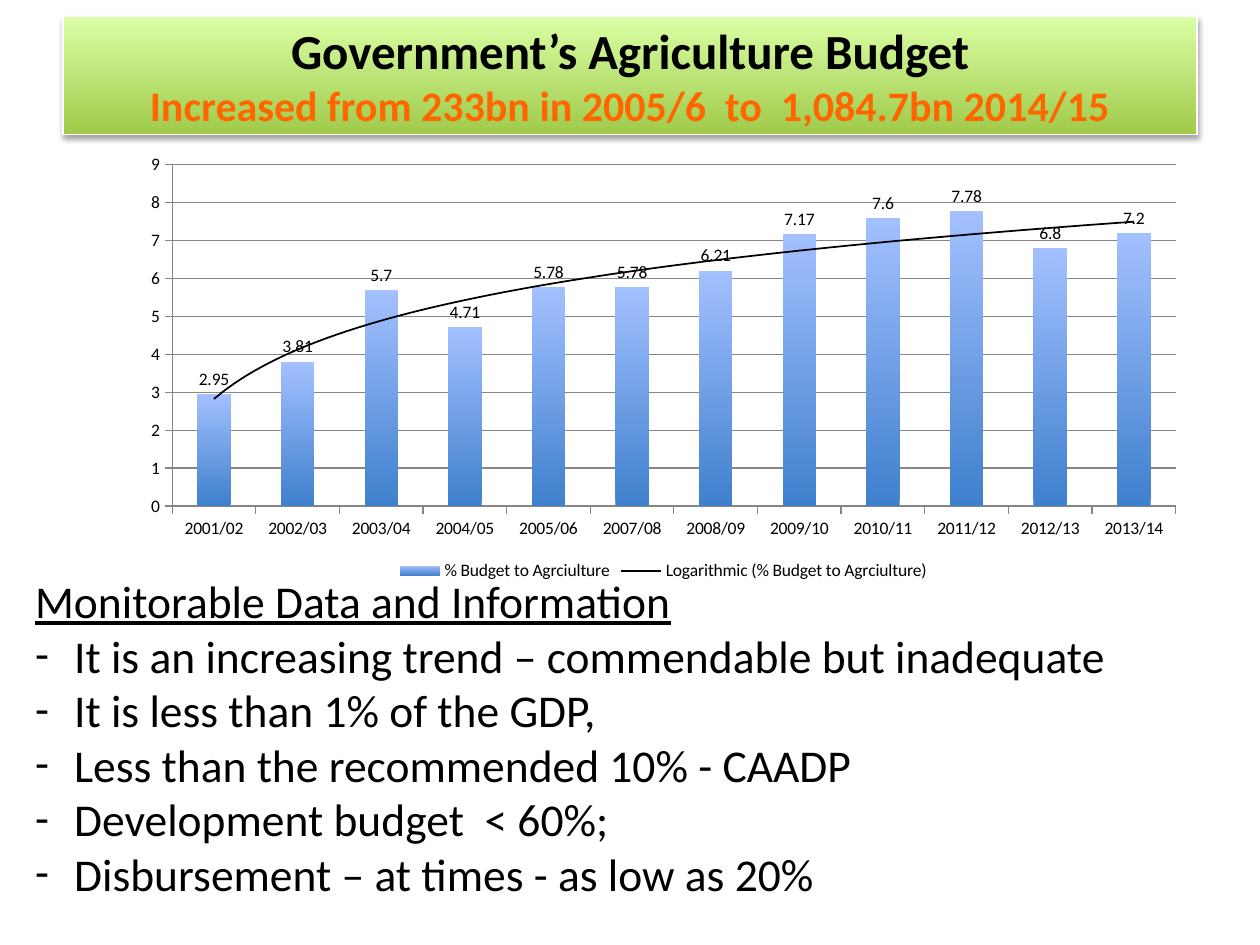
from lxml.etree import SubElement
from pptx import Presentation
from pptx.chart.data import CategoryChartData
from pptx.dml.color import RGBColor
from pptx.enum.chart import XL_CHART_TYPE, XL_LABEL_POSITION, XL_LEGEND_POSITION, XL_TICK_MARK
from pptx.enum.text import MSO_ANCHOR, MSO_AUTO_SIZE, PP_ALIGN
from pptx.oxml import parse_xml
from pptx.oxml.ns import nsdecls, qn
from pptx.util import Inches, Pt

FONT = "Calibri"
BLACK = "000000"
GRID_GREY = "868686"

BUDGET_SHARES = {
    "2001/02": 2.95, "2002/03": 3.81, "2003/04": 5.7, "2004/05": 4.71,
    "2005/06": 5.78, "2007/08": 5.78, "2008/09": 6.21, "2009/10": 7.17,
    "2010/11": 7.6, "2011/12": 7.78, "2012/13": 6.8, "2013/14": 7.2,
}
FINDINGS = [
    "It is an increasing trend – commendable but inadequate",
    "It is less than 1% of the GDP,",
    "Less than the recommended 10% - CAADP",
    "Development budget  < 60%;",
    "Disbursement – at times - as low as 20%",
]


def rgb(color):
    return RGBColor.from_string(color)


def style_font(font, size, color=BLACK, bold=False):
    font.name, font.size, font.bold = FONT, Pt(size), bold
    font.color.rgb = rgb(color)


def add_run(paragraph, text, size, color=BLACK, bold=False):
    run = paragraph.add_run()
    run.text = text
    style_font(run.font, size, color, bold)
    return run


def fill_upward(fill, bottom, top):
    """Vertical gradient that runs from the bottom colour to the top one."""
    fill.gradient()
    fill.gradient_angle = 90
    for stop, color in zip(fill.gradient_stops, (bottom, top)):
        stop.color.rgb = rgb(color)


def add_drop_shadow(shape):
    shape.shadow.inherit = False
    effects = shape.element.spPr.find(qn("a:effectLst"))
    shadow = SubElement(effects, qn("a:outerShdw"), blurRad=str(Pt(3.1)),
                        dist=str(Pt(1.8)), dir="5400000", rotWithShape="0")
    color = SubElement(shadow, qn("a:srgbClr"), val=BLACK)
    SubElement(color, qn("a:alpha"), val="35000")


def format_title(title):
    title.left, title.top = Inches(0.5), Inches(0.13)
    title.width, title.height = Inches(9), Inches(0.94)
    fill_upward(title.fill, "A0CA4A", "DAFFA5")
    title.line.color.rgb = rgb("FFFFFF")
    title.line.width = Pt(0.75)
    add_drop_shadow(title)

    frame = title.text_frame
    frame.auto_size = MSO_AUTO_SIZE.NONE
    frame.vertical_anchor = MSO_ANCHOR.MIDDLE
    heading = frame.paragraphs[0]
    heading.alignment = PP_ALIGN.CENTER
    add_run(heading, "Government’s Agriculture Budget", 28, bold=True)
    heading.add_line_break()
    add_run(heading, "Increased from 233bn in 2005/6  to  1,084.7bn 2014/15",
            24, "FF6600", bold=True)


def add_log_trend(series):
    trend = parse_xml(
        f'<c:trendline {nsdecls("c", "a")}><c:spPr><a:ln w="{Pt(1)}"><a:solidFill>'
        f'<a:srgbClr val="{BLACK}"/></a:solidFill></a:ln></c:spPr>'
        '<c:trendlineType val="log"/><c:dispRSqr val="0"/><c:dispEq val="0"/>'
        '</c:trendline>')
    series._element.find(qn("c:cat")).addprevious(trend)


def style_axis(axis):
    axis.major_tick_mark = XL_TICK_MARK.OUTSIDE
    axis.minor_tick_mark = XL_TICK_MARK.NONE
    axis.format.line.color.rgb = rgb(GRID_GREY)


def add_budget_chart(slide):
    data = CategoryChartData()
    data.categories = list(BUDGET_SHARES)
    data.add_series("% Budget to Agrciulture", list(BUDGET_SHARES.values()))
    chart = slide.shapes.add_chart(
        XL_CHART_TYPE.COLUMN_CLUSTERED, Inches(1.03), Inches(1.16),
        Inches(8.47), Inches(3.49), data).chart
    style_font(chart.font, 10)
    chart.has_title = False
    chart.has_legend = True
    chart.legend.position = XL_LEGEND_POSITION.BOTTOM
    chart.legend.include_in_layout = False

    # Axes
    style_axis(chart.category_axis)
    shares = chart.value_axis
    style_axis(shares)
    shares.minimum_scale, shares.maximum_scale, shares.major_unit = 0, 9, 1
    shares.has_major_gridlines = True
    shares.major_gridlines.format.line.color.rgb = rgb(GRID_GREY)

    # Columns with value labels and a logarithmic trend
    plot = chart.plots[0]
    plot.gap_width = 150
    plot.vary_by_categories = False
    budget = plot.series[0]
    fill_upward(budget.format.fill, "3F80CD", "A3C0FF")
    labels = budget.data_labels
    labels.show_value = True
    labels.position = XL_LABEL_POSITION.OUTSIDE_END
    add_log_trend(budget)


def add_dash_bullet(paragraph):
    properties = paragraph._p.get_or_add_pPr()
    indent = Inches(0.31)
    properties.set("marL", str(indent))
    properties.set("indent", str(-indent))
    SubElement(properties, qn("a:buFont"), typeface=FONT)
    SubElement(properties, qn("a:buChar"), char="-")


def add_findings(slide):
    frame = slide.shapes.add_textbox(
        Inches(0.18), Inches(4.5), Inches(9.59), Inches(2.73)).text_frame
    frame.word_wrap = True
    frame.auto_size = MSO_AUTO_SIZE.SHAPE_TO_FIT_TEXT
    heading = add_run(frame.paragraphs[0], "Monitorable Data and Information", 26)
    heading.font.underline = True
    for finding in FINDINGS:
        paragraph = frame.add_paragraph()
        add_dash_bullet(paragraph)
        add_run(paragraph, finding, 26)


def main():
    presentation = Presentation()
    presentation.slide_width, presentation.slide_height = Inches(10), Inches(7.5)
    title_only = presentation.slide_layouts[5]
    slide = presentation.slides.add_slide(title_only)
    format_title(slide.shapes.title)
    add_budget_chart(slide)
    add_findings(slide)
    presentation.save("out.pptx")


if __name__ == "__main__":
    main()
